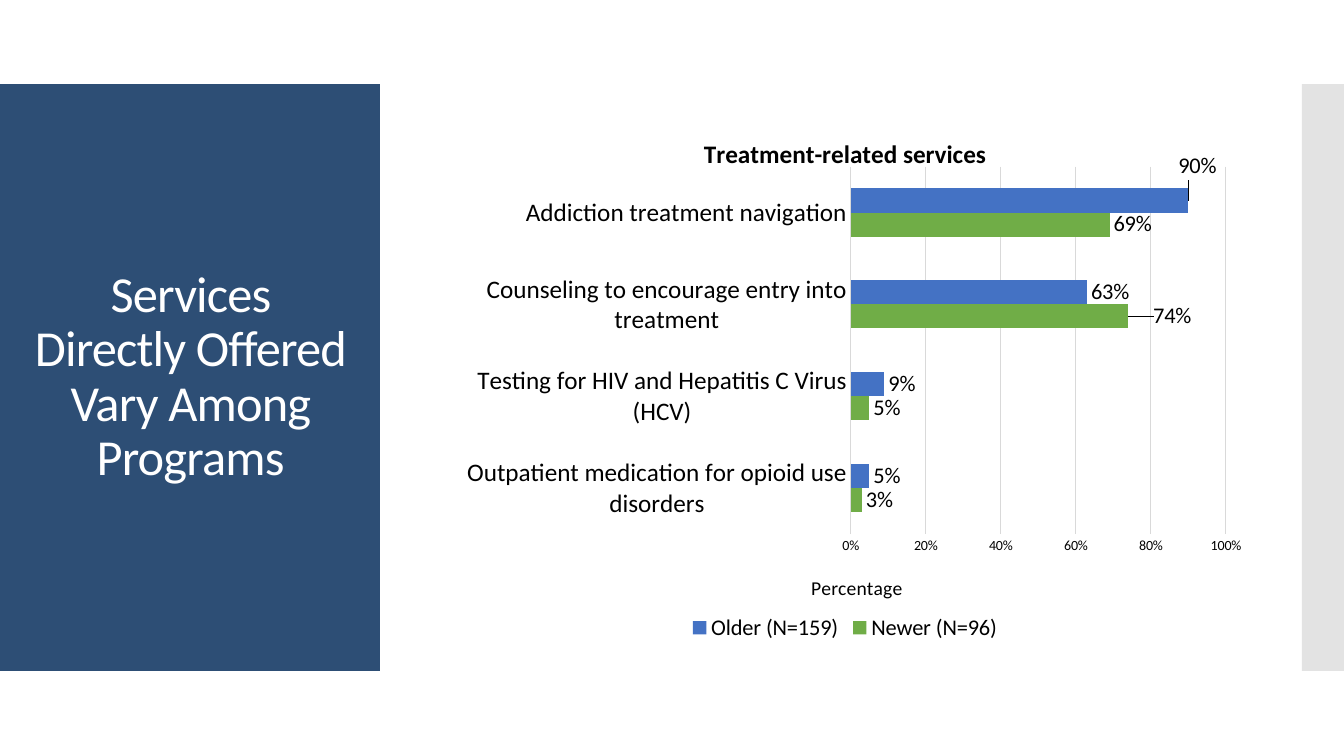
from lxml import etree
from pptx import Presentation
from pptx.chart.data import CategoryChartData
from pptx.dml.color import RGBColor
from pptx.enum.chart import XL_CHART_TYPE as ChartType, XL_LABEL_POSITION as LabelPos
from pptx.enum.chart import XL_LEGEND_POSITION as LegendPos, XL_TICK_MARK as TickMark
from pptx.enum.shapes import MSO_SHAPE as Shape
from pptx.enum.text import MSO_ANCHOR as Anchor, PP_ALIGN as Align
from pptx.oxml import parse_xml
from pptx.oxml.ns import nsdecls, qn
from pptx.util import Pt

EMU_PER_PX = 914400 / 100.8
BLACK, WHITE, NAVY, SILVER = "000000", "FFFFFF", "2D4E75", "C8C8C8"
GREEN, BLUE, GRID = "70AD47", "4472C4", "D9D9D9"


def px(length):
    return round(length * EMU_PER_PX)


def color(hex_code):
    return RGBColor.from_string(hex_code)


def manual_layout(x, y, width=None, height=None):
    """Chart layout as fractions; without a size, only a position."""
    parts = [("xMode", "edge"), ("yMode", "edge"), ("x", x), ("y", y)]
    if width:
        parts = [("layoutTarget", "inner")] + parts + [("w", width), ("h", height)]
    inner = "".join(f'<c:{tag} val="{value}"/>' for tag, value in parts)
    return parse_xml(f'<c:layout {nsdecls("c")}><c:manualLayout>{inner}'
                     "</c:manualLayout></c:layout>")


def set_layout(parent, layout, after):
    for old in parent.findall(qn("c:layout")):
        parent.remove(old)
    if after is None:
        parent.insert(0, layout)
    else:
        parent.find(qn(after)).addnext(layout)


class SlideBuilder:
    font_name = "Calibri"

    def __init__(self, deck):
        self.slide = deck.slides.add_slide(deck.slide_layouts[6])

    def style(self, font, size, hex_code=BLACK, bold=False):
        font.name, font.size, font.bold = self.font_name, Pt(size), bold
        font.color.rgb = color(hex_code)

    def panel(self, left, top, width, height, fill, alpha=None):
        box = self.slide.shapes.add_shape(
            Shape.RECTANGLE, px(left), px(top), px(width), px(height))
        box.shadow.inherit = False
        box.fill.solid()
        box.fill.fore_color.rgb = color(fill)
        box.line.fill.background()
        if alpha:
            tint = box.fill._xPr.find(".//" + qn("a:srgbClr"))
            etree.SubElement(tint, qn("a:alpha")).set("val", str(alpha * 1000))

    def heading(self, left, top, width, height, text):
        box = self.slide.shapes.add_textbox(px(left), px(top), px(width), px(height))
        frame = box.text_frame
        frame.word_wrap = True
        frame.vertical_anchor = Anchor.MIDDLE
        frame.margin_left = frame.margin_right = px(5)
        frame.margin_top = frame.margin_bottom = px(5)
        para = frame.paragraphs[0]
        para.alignment, para.line_spacing = Align.CENTER, 0.9
        span = para.add_run()
        span.text = text
        self.style(span.font, 36, WHITE)
        span._r.get_or_add_rPr().set("spc", "-60")

    def chart_title(self, title, text, size, bold, x, y):
        span = title.text_frame.paragraphs[0].add_run()
        span.text = text
        self.style(span.font, size, bold=bold)
        set_layout(title._element, manual_layout(x, y), "c:tx")

    def bar_chart(self, left, top, width, height, categories, series):
        data = CategoryChartData(number_format="0%")
        data.categories = categories
        for name, values, *_ in series:
            data.add_series(name, values)
        chart = self.slide.shapes.add_chart(
            ChartType.BAR_CLUSTERED, px(left), px(top), px(width), px(height), data).chart
        self.style(chart.font, 10)

        # Titles, plot area and legend
        chart.has_title = True
        self.chart_title(chart.chart_title, "Treatment-related services", 18, True, 0.325, 0.045)
        plot_area = chart._chartSpace.chart.plotArea
        set_layout(plot_area, manual_layout(0.507, 0.109, 0.451, 0.683), None)
        chart.has_legend = True
        chart.legend.position = LegendPos.BOTTOM
        chart.legend.include_in_layout = False
        self.style(chart.legend.font, 16)

        # Axes
        for axis, size in ((chart.category_axis, 18), (chart.value_axis, 10)):
            axis.major_tick_mark = axis.minor_tick_mark = TickMark.NONE
            self.style(axis.tick_labels.font, size)
        chart.category_axis.has_major_gridlines = False
        scale = chart.value_axis
        scale.minimum_scale, scale.maximum_scale, scale.major_unit = 0, 1, 0.2
        scale.tick_labels.number_format = "0%"
        scale.tick_labels.number_format_is_linked = False
        scale.format.line.fill.background()
        for line in (chart.category_axis.format.line, scale.major_gridlines.format.line):
            line.color.rgb, line.width = color(GRID), Pt(0.75)
        self.chart_title(scale.axis_title, "Percentage", 14, False, 0.455, 0.86)

        # Bars and their labels
        plot = chart.plots[0]
        plot.gap_width, plot.overlap, plot.vary_by_categories = 182, 0, False
        for bars, (_, _, fill, moved, x, y) in zip(plot.series, series):
            bars.format.fill.solid()
            bars.format.fill.fore_color.rgb = color(fill)
            labels = bars.data_labels
            labels.show_value, labels.position = True, LabelPos.OUTSIDE_END
            labels.number_format, labels.number_format_is_linked = "0%", False
            self.style(labels.font, 16)
            label = bars.points[moved].data_label
            label.position = LabelPos.OUTSIDE_END
            self.style(label.font, 16)
            shift = parse_xml(
                f'<c:layout {nsdecls("c")}><c:manualLayout><c:x val="{x}"/>'
                f'<c:y val="{y}"/></c:manualLayout></c:layout>')
            set_layout(bars._element.find(".//" + qn("c:dLbl")), shift, "c:idx")


def main():
    deck = Presentation()
    deck.slide_width, deck.slide_height = px(1344), px(756)
    page = SlideBuilder(deck)

    # Side panels and heading
    page.panel(0, 84, 380, 587, NAVY)
    page.panel(1302, 84, 42, 587, SILVER, alpha=50)
    page.heading(28, 124, 325, 507, "Services Directly Offered Vary Among Programs")

    # Services chart, listed from the bottom up;
    # each series ends with the index and offset of its moved label
    page.bar_chart(
        429, 108, 832, 538,
        ["Outpatient medication for opioid use disorders",
         "Testing for HIV and Hepatitis C Virus (HCV)",
         "Counseling to encourage entry into treatment",
         "Addiction treatment navigation"],
        [("Newer (N=96)", (0.03, 0.05, 0.74, 0.69), GREEN, 2, 0.025, 0),
         ("Older (N=159)", (0.05, 0.09, 0.63, 0.9), BLUE, 3, -0.017, -0.063)])
    deck.save("out.pptx")


if __name__ == "__main__":
    main()
